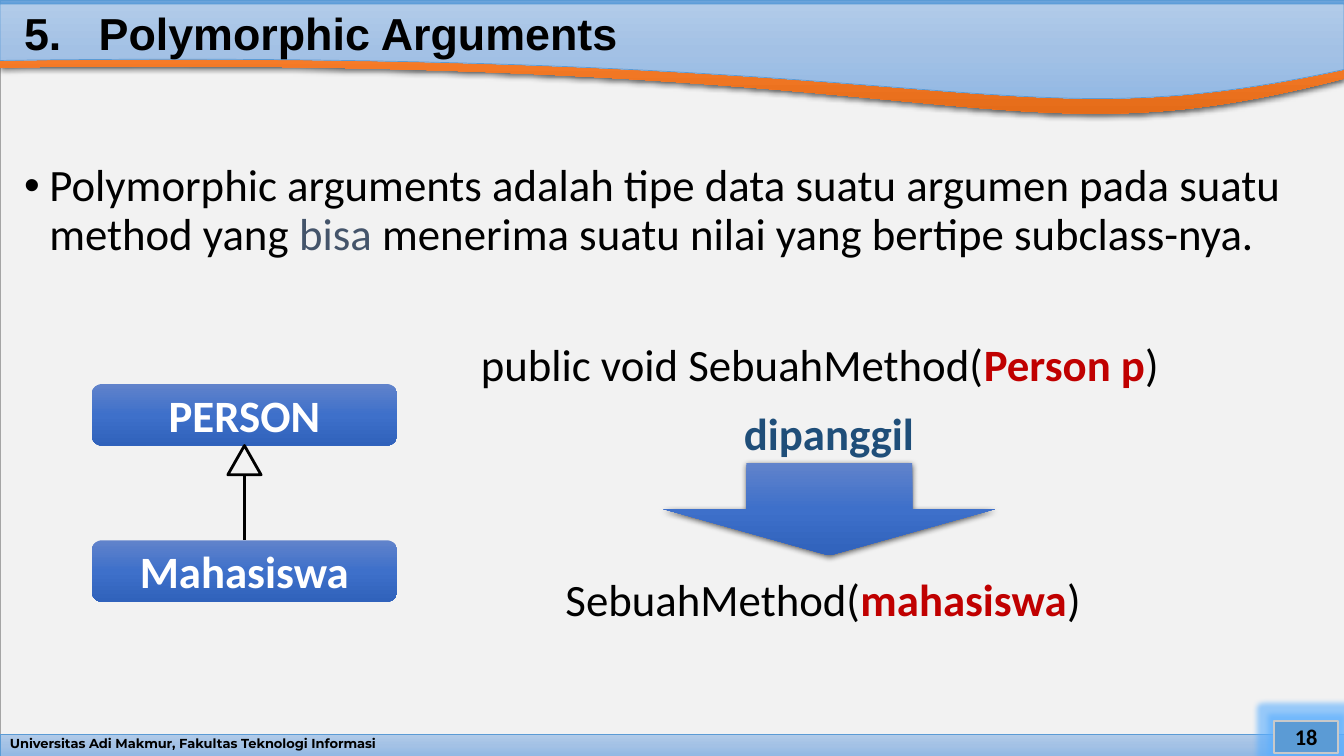
from lxml.etree import SubElement
from pptx import Presentation
from pptx.dml.color import RGBColor
from pptx.enum.shapes import MSO_CONNECTOR, MSO_SHAPE
from pptx.enum.text import MSO_ANCHOR, PP_ALIGN
from pptx.oxml.ns import qn
from pptx.util import Inches, Pt

PALE_BLUE = ("B1CBE9", "A3C1E5", "93B9E4")
SKY_BLUE = ("71A6DB", "559BDB", "448ACA")
ROYAL_BLUE = ("6183CB", "3E70CA", "3062BB")
ORANGE = ("F18C57", "F67B28", "E56C19")
hex_color = RGBColor.from_string


def style(shape, fill=None, line=None, width=0.5, shadow=False):
    """Paint a shape; a tuple of colours makes a top-down gradient."""
    shape.shadow.inherit = False
    if fill is None:
        shape.fill.background()
    elif isinstance(fill, tuple):
        shape.fill.gradient()
        shape.fill.gradient_angle = 270
        stops = shape.element.spPr.find(qn("a:gradFill")).find(qn("a:gsLst"))
        stops.clear()
        for index, color in enumerate(fill):
            stop = SubElement(stops, qn("a:gs"), pos=str(index * 50000))
            SubElement(stop, qn("a:srgbClr"), val=color)
    else:
        shape.fill.solid()
        shape.fill.fore_color.rgb = hex_color(fill)
    if line:
        shape.line.color.rgb = hex_color(line)
        shape.line.width = Pt(width)
    else:
        shape.line.fill.background()
    if shadow:
        effects = shape.element.spPr.find(qn("a:effectLst"))
        outer = SubElement(effects, qn("a:outerShdw"), blurRad=str(Pt(4.5)),
                           dist=str(Pt(1.5)), dir="5400000", algn="ctr", rotWithShape="0")
        tint = SubElement(outer, qn("a:srgbClr"), val="000000")
        SubElement(tint, qn("a:alpha"), val="63000")


def write(shape, runs, size=32, font="Calibri", align=PP_ALIGN.LEFT,
          anchor=MSO_ANCHOR.TOP, spacing=0.9, before=0):
    """Fill a shape with one paragraph of (text, colour, bold) runs."""
    frame = shape.text_frame
    frame.word_wrap = True
    frame.vertical_anchor = anchor
    para = frame.paragraphs[0]
    para.alignment = align
    para.line_spacing = spacing
    para.space_before = Pt(before)
    for text, color, bold in runs:
        span = para.add_run()
        span.text = text
        span.font.name = font
        span.font.size = Pt(size)
        span.font.bold = bold
        span.font.color.rgb = hex_color(color)
    return para


deck = Presentation()
deck.slide_width = Inches(13.33)
deck.slide_height = Inches(7.5)
page = deck.slides.add_slide(deck.slide_layouts[6])
shapes = page.shapes

# Background panel
panel = shapes.add_shape(MSO_SHAPE.RECTANGLE, 0, Inches(0.04), Inches(13.33), Inches(7.46))
style(panel, "F2F2F2", "A5A5A5")

# Header waves, with the two bars between them
waves = [
    (0.01, 1.12, (0.67, 0.53, 1.68, 0.78), ORANGE, None, True),
    (0.04, 0.98, (0.6, 0.47, 1.44, 0.69), PALE_BLUE, "5B9BD5", False),
]
bars = [(7.29, 0.21, PALE_BLUE), (0, 0.11, SKY_BLUE)]
for top, bottom, curve_y, fill, line, shadow in waves:
    builder = shapes.build_freeform(Inches(13.33), Inches(top), scale=1.0)
    builder.add_line_segments([(0, Inches(top)), (0, Inches(curve_y[0])),
                               (Inches(13.33), Inches(bottom))], close=True)
    wave = builder.convert_to_shape()
    # The lower edge becomes a cubic curve
    edge = wave.element.spPr.findall(".//" + qn("a:lnTo"))[2]
    edge.tag = qn("a:cubicBezTo")
    edge.remove(edge[0])
    for x, y in zip((9.76, 9.86, 13.33), curve_y[1:]):
        SubElement(edge, qn("a:pt"), x=str(Inches(x)), y=str(Inches(y) - Inches(top)))
    style(wave, fill, line, shadow=shadow)
    if fill == ORANGE:
        for bar_top, height, shade in bars:
            bar = shapes.add_shape(MSO_SHAPE.RECTANGLE, 0, Inches(bar_top),
                                   Inches(13.33), Inches(height))
            style(bar, shade, "5B9BD5")

# Footer and page number
footer = shapes.add_textbox(0, Inches(7.29), Inches(13.33), Inches(0.21))
write(footer, [("Universitas Adi Makmur, Fakultas Teknologi Informasi", "000000", True)],
      9.3, "Montserrat", anchor=MSO_ANCHOR.MIDDLE, spacing=0.7)

number = shapes.add_shape(MSO_SHAPE.RECTANGLE, Inches(12.64), Inches(7.15),
                          Inches(0.63), Inches(0.32))
style(number, "5B9BD5", "C9C9C9", 1.5)
glow = SubElement(number.element.spPr.find(qn("a:effectLst")), qn("a:glow"),
                  rad=str(Inches(0.11)))
glow_tint = SubElement(glow, qn("a:srgbClr"), val="5BAFFF")
SubElement(glow_tint, qn("a:alpha"), val="60000")
write(number, [("18", "000000", True)], 16, align=PP_ALIGN.CENTER,
      anchor=MSO_ANCHOR.MIDDLE, spacing=1)

# Title, with a tab after its number
title = shapes.add_textbox(Inches(0.14), Inches(0.13), Inches(12.98), Inches(0.46))
para = write(title, [("5.\tPolymorphic Arguments", "000000", True)], font="Arial",
             anchor=MSO_ANCHOR.MIDDLE)
tabs = SubElement(para._p.get_or_add_pPr(), qn("a:tabLst"))
SubElement(tabs, qn("a:tab"), pos=str(Inches(0.74)), algn="l")

# Bulleted definition
body = shapes.add_textbox(Inches(0.14), Inches(1.57), Inches(12.98), Inches(1.09))
para = write(body, [
    ("Polymorphic arguments adalah tipe data suatu argumen pada suatu method yang ",
     "000000", False),
    ("bisa ", "44546A", False),
    ("menerima suatu nilai yang bertipe subclass-nya.", "000000", False),
], before=10)
bullet = para._p.get_or_add_pPr()
bullet.set("marL", str(Inches(0.25)))
bullet.set("indent", str(-Inches(0.25)))
SubElement(bullet, qn("a:buFont"), typeface="Arial")
SubElement(bullet, qn("a:buChar"), char="•")

# Class diagram: the subclass points up to its parent
for name, top in (("PERSON", 3.81), ("Mahasiswa", 5.36)):
    box = shapes.add_shape(MSO_SHAPE.ROUNDED_RECTANGLE, Inches(0.91), Inches(top),
                           Inches(3.03), Inches(0.61))
    style(box, ROYAL_BLUE)
    write(box, [(name, "FFFFFF", True)], align=PP_ALIGN.CENTER,
          anchor=MSO_ANCHOR.MIDDLE, spacing=1)

# The elbow stem is laid flat, then turned upright
stem = shapes.add_connector(MSO_CONNECTOR.ELBOW, Inches(2.75), Inches(5.03),
                            Inches(2.1), Inches(5.03))
stem.element.spPr.find(qn("a:xfrm")).set("rot", str(270 * 60000))
stem.line.color.rgb = hex_color("000000")
stem.line.width = Pt(2)
SubElement(stem.element.spPr, qn("a:effectLst"))

head = shapes.add_shape(MSO_SHAPE.ISOSCELES_TRIANGLE, Inches(2.26), Inches(4.42),
                        Inches(0.33), Inches(0.29))
style(head, line="000000", width=2)

# Method call: declaration, arrow, invocation
arrow = shapes.add_shape(MSO_SHAPE.DOWN_ARROW, Inches(6.58), Inches(4.59),
                         Inches(3.29), Inches(0.92))
style(arrow, ROYAL_BLUE, shadow=True)

calls = [
    (4.67, 3.35, 7.91, 0.71, [("public void SebuahMethod(", "000000", False),
                              ("Person p", "C00000", True), (")", "000000", False)]),
    (7.28, 4.04, 1.96, 0.59, [("dipanggil", "1F4E79", True)]),
    (5.51, 5.68, 5.42, 0.71, [("SebuahMethod(", "000000", False),
                              ("mahasiswa", "C00000", True), (")", "000000", False)]),
]
for left, top, width, height, runs in calls:
    label = shapes.add_textbox(Inches(left), Inches(top), Inches(width), Inches(height))
    write(label, runs, before=10)

deck.save("out.pptx")
